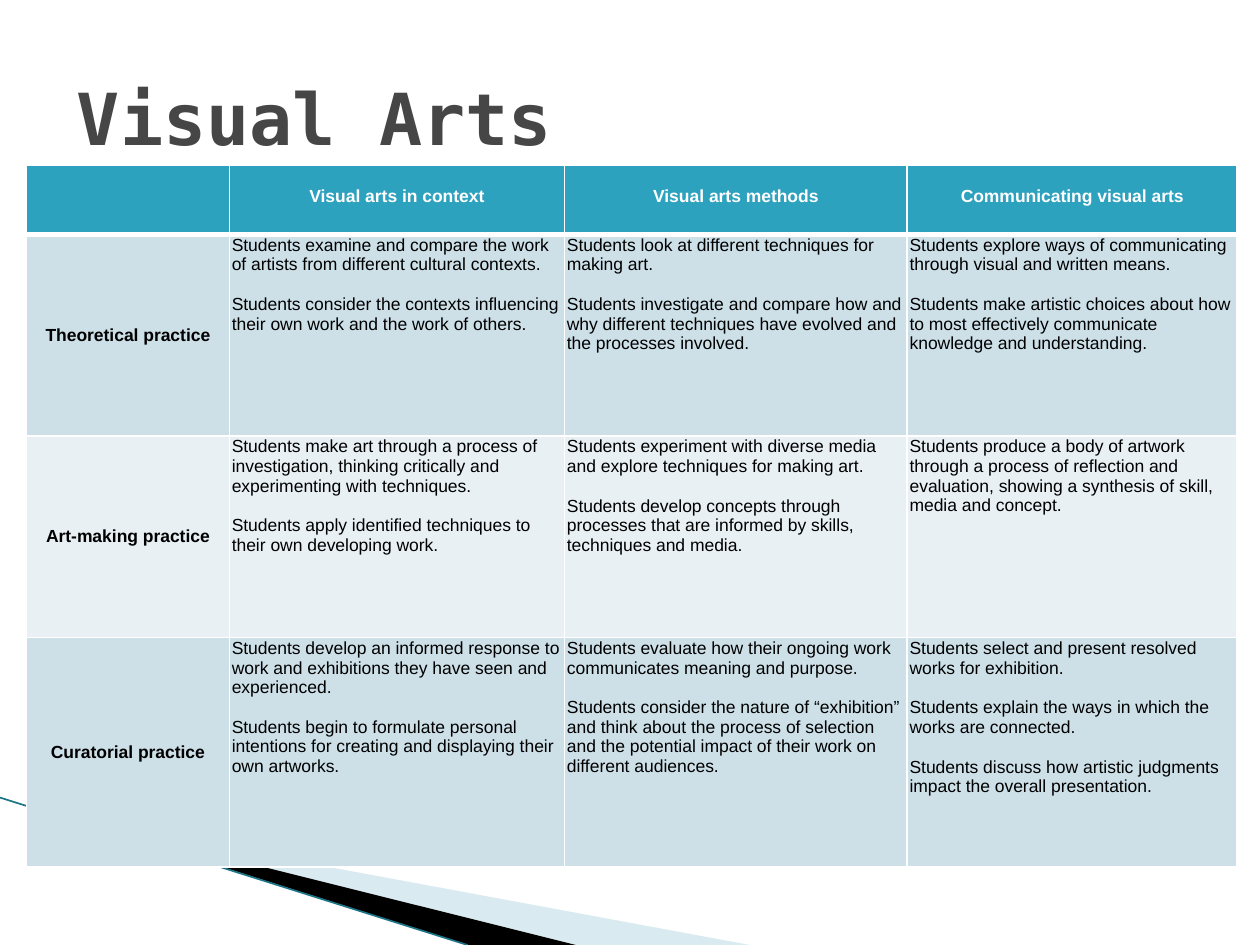
from typing import NamedTuple

from lxml import etree
from pptx import Presentation
from pptx.dml.color import RGBColor
from pptx.enum.shapes import MSO_CONNECTOR
from pptx.enum.text import MSO_ANCHOR, PP_ALIGN
from pptx.oxml.ns import qn
from pptx.util import Inches, Pt

LEFT, CENTER = PP_ALIGN.LEFT, PP_ALIGN.CENTER
TOP, MIDDLE = MSO_ANCHOR.TOP, MSO_ANCHOR.MIDDLE

WHITE = RGBColor(0xFF, 0xFF, 0xFF)
BLACK = RGBColor(0x00, 0x00, 0x00)
TITLE_GRAY = RGBColor(0x46, 0x46, 0x46)
HEADER_TEAL = RGBColor(0x2D, 0xA2, 0xBF)
BAND_DARK = RGBColor(0xCD, 0xE0, 0xE8)
BAND_LIGHT = RGBColor(0xE8, 0xF0, 0xF4)
WEDGE_BLUE = RGBColor(0xA0, 0xCB, 0xDC)
EDGE_TEAL = RGBColor(0x1B, 0x75, 0x87)

COLUMN_WIDTHS = (1.61, 2.66, 2.72, 2.62)
ROW_HEIGHTS = (0.55, 1.6, 1.6, 1.82)
PARAGRAPH_GAP = Pt(11.5)


class Wedge(NamedTuple):
    points: tuple[tuple[float, float], ...]
    color: RGBColor
    opacity: int


class CellStyle(NamedTuple):
    fill: RGBColor
    color: RGBColor
    bold: bool
    align: PP_ALIGN
    anchor: MSO_ANCHOR
    top_margin: float = 0.01
    bottom_border: float = 1


class Practice(NamedTuple):
    name: str
    fill: RGBColor
    descriptions: tuple[tuple[str, ...], ...]


WEDGES = (
    Wedge(((0.55, 6.5), (5.95, 7.5), (4.56, 7.5)), WEDGE_BLUE, 40),
    Wedge(((0.53, 6.49), (4.57, 7.5), (3.72, 7.5)), BLACK, 100),
)
HEADINGS = ("", "Visual arts in context", "Visual arts methods", "Communicating visual arts")
PRACTICES = (
    Practice("Theoretical practice", BAND_DARK, (
        ("Students examine and compare the work of artists from different cultural contexts.",
         "Students consider the contexts influencing their own work and the work of others."),
        ("Students look at different techniques for making art.",
         "Students investigate and compare how and why different techniques have evolved "
         "and the processes involved."),
        ("Students explore ways of communicating through visual and written means.",
         "Students make artistic choices about how to most effectively communicate "
         "knowledge and understanding."),
    )),
    Practice("Art-making practice", BAND_LIGHT, (
        ("Students make art through a process of investigation, thinking critically and "
         "experimenting with techniques.",
         "Students apply identified techniques to their own developing work."),
        ("Students experiment with diverse media and explore techniques for making art.",
         "Students develop concepts through processes that are informed by skills, "
         "techniques and media."),
        ("Students produce a body of artwork through a process of reflection and "
         "evaluation, showing a synthesis of skill, media and concept.",),
    )),
    Practice("Curatorial practice", BAND_DARK, (
        ("Students develop an informed response to work and exhibitions they have seen "
         "and experienced.",
         "Students begin to formulate personal intentions for creating and displaying "
         "their own artworks."),
        ("Students evaluate how their ongoing work communicates meaning and purpose.",
         "Students consider the nature of “exhibition” and think about the process of "
         "selection and the potential impact of their work on different audiences."),
        ("Students select and present resolved works for exhibition.",
         "Students explain the ways in which the works are connected.",
         "Students discuss how artistic judgments impact the overall presentation."),
    )),
)


def set_attributes(target, values: dict) -> None:
    for name, value in values.items():
        setattr(target, name, value)


def format_font(font, family: str, size: float, color: RGBColor, bold: bool) -> None:
    set_attributes(font, {"name": family, "size": Pt(size), "bold": bold})
    font.color.rgb = color


def draw_wedge(slide, wedge: Wedge) -> None:
    start, *others = [(Inches(x), Inches(y)) for x, y in wedge.points]
    builder = slide.shapes.build_freeform(*start)
    builder.add_line_segments(others, close=True)
    shape = builder.convert_to_shape()
    shape.shadow.inherit = False
    shape.line.fill.background()
    shape.fill.solid()
    shape.fill.fore_color.rgb = wedge.color
    if wedge.opacity < 100:
        color = shape.fill._xPr.find(f".//{qn('a:srgbClr')}")
        etree.SubElement(color, qn("a:alpha"), val=str(wedge.opacity * 1000))


def draw_edge(slide) -> None:
    edge = slide.shapes.add_connector(
        MSO_CONNECTOR.STRAIGHT, Inches(0), Inches(6.33), Inches(3.71), Inches(7.5))
    edge.line.color.rgb = EDGE_TEAL
    edge.line.width = Pt(0.95)
    etree.SubElement(edge._element.spPr, qn("a:effectLst"))


def add_borders(cell, bottom: float) -> None:
    properties = cell._tc.get_or_add_tcPr()
    for side, width in {"L": 1, "R": 1, "T": 1, "B": bottom}.items():
        border = etree.SubElement(properties, qn(f"a:ln{side}"), w=str(Pt(width)))
        fill = etree.SubElement(border, qn("a:solidFill"))
        etree.SubElement(fill, qn("a:srgbClr"), val=str(WHITE))


def fill_cell(cell, paragraphs: tuple[str, ...], style: CellStyle) -> None:
    add_borders(cell, style.bottom_border)
    cell.fill.solid()
    cell.fill.fore_color.rgb = style.fill
    set_attributes(cell, {
        "margin_left": Inches(0.02), "margin_right": Inches(0.02),
        "margin_top": Inches(style.top_margin), "margin_bottom": Inches(0.01),
        "vertical_anchor": style.anchor,
    })
    cell.text = "\n".join(paragraphs)
    for index, paragraph in enumerate(cell.text_frame.paragraphs):
        paragraph.alignment = style.align
        if index:
            paragraph.space_before = PARAGRAPH_GAP
        format_font(paragraph.font, "Arial", 10, style.color, style.bold)
        for run in paragraph.runs:
            format_font(run.font, "Arial", 10, style.color, style.bold)


def draw_table(slide) -> None:
    table = slide.shapes.add_table(
        len(ROW_HEIGHTS), len(COLUMN_WIDTHS), Inches(0.21), Inches(1.31),
        Inches(sum(COLUMN_WIDTHS)), Inches(sum(ROW_HEIGHTS))).table
    for column, width in zip(table.columns, COLUMN_WIDTHS):
        column.width = Inches(width)
    for row, height in zip(table.rows, ROW_HEIGHTS):
        row.height = Inches(height)

    header = CellStyle(HEADER_TEAL, WHITE, True, CENTER, TOP, 0.17, 3)
    for column, heading in enumerate(HEADINGS):
        fill_cell(table.cell(0, column), (heading,), header)
    for row, practice in enumerate(PRACTICES, start=1):
        label = CellStyle(practice.fill, BLACK, True, CENTER, MIDDLE)
        body = CellStyle(practice.fill, BLACK, False, LEFT, TOP)
        fill_cell(table.cell(row, 0), (practice.name,), label)
        for column, description in enumerate(practice.descriptions, start=1):
            fill_cell(table.cell(row, column), description, body)


def write_title(slide) -> None:
    title = slide.shapes.title
    set_attributes(title, {"left": Inches(0.51), "top": Inches(0.3),
                           "width": Inches(8.49), "height": Inches(1.25)})
    title.text_frame.text = "Visual Arts"
    title.text_frame.vertical_anchor = MIDDLE
    paragraph = title.text_frame.paragraphs[0]
    paragraph.alignment = LEFT
    format_font(paragraph.runs[0].font, "DejaVu Sans Mono", 41, TITLE_GRAY, True)


def main() -> None:
    presentation = Presentation()
    presentation.slide_width = Inches(10)
    presentation.slide_height = Inches(7.5)
    slide = presentation.slides.add_slide(presentation.slide_layouts[5])
    write_title(slide)
    for wedge in WEDGES:
        draw_wedge(slide, wedge)
    draw_edge(slide)
    draw_table(slide)
    presentation.save("out.pptx")


if __name__ == "__main__":
    main()
